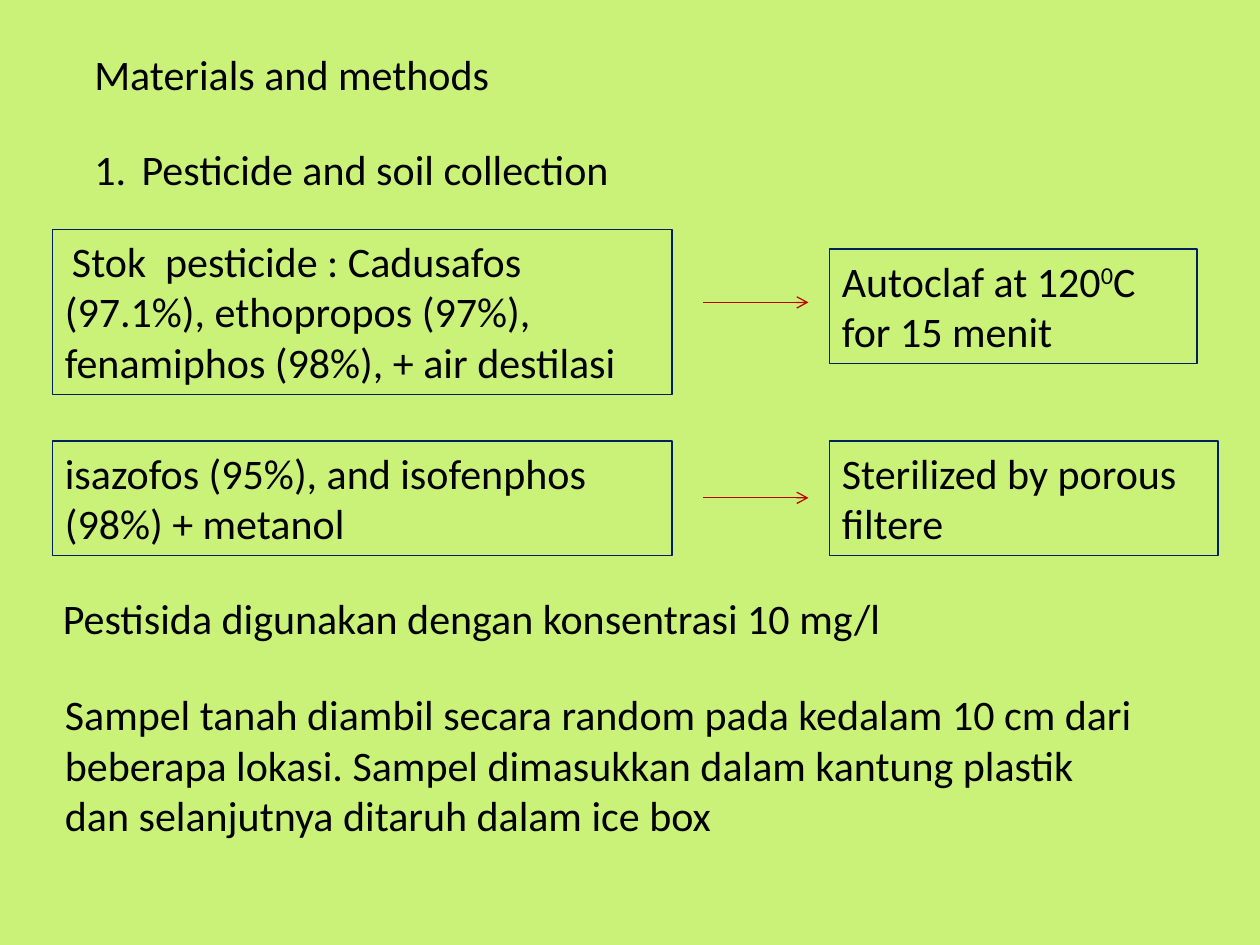
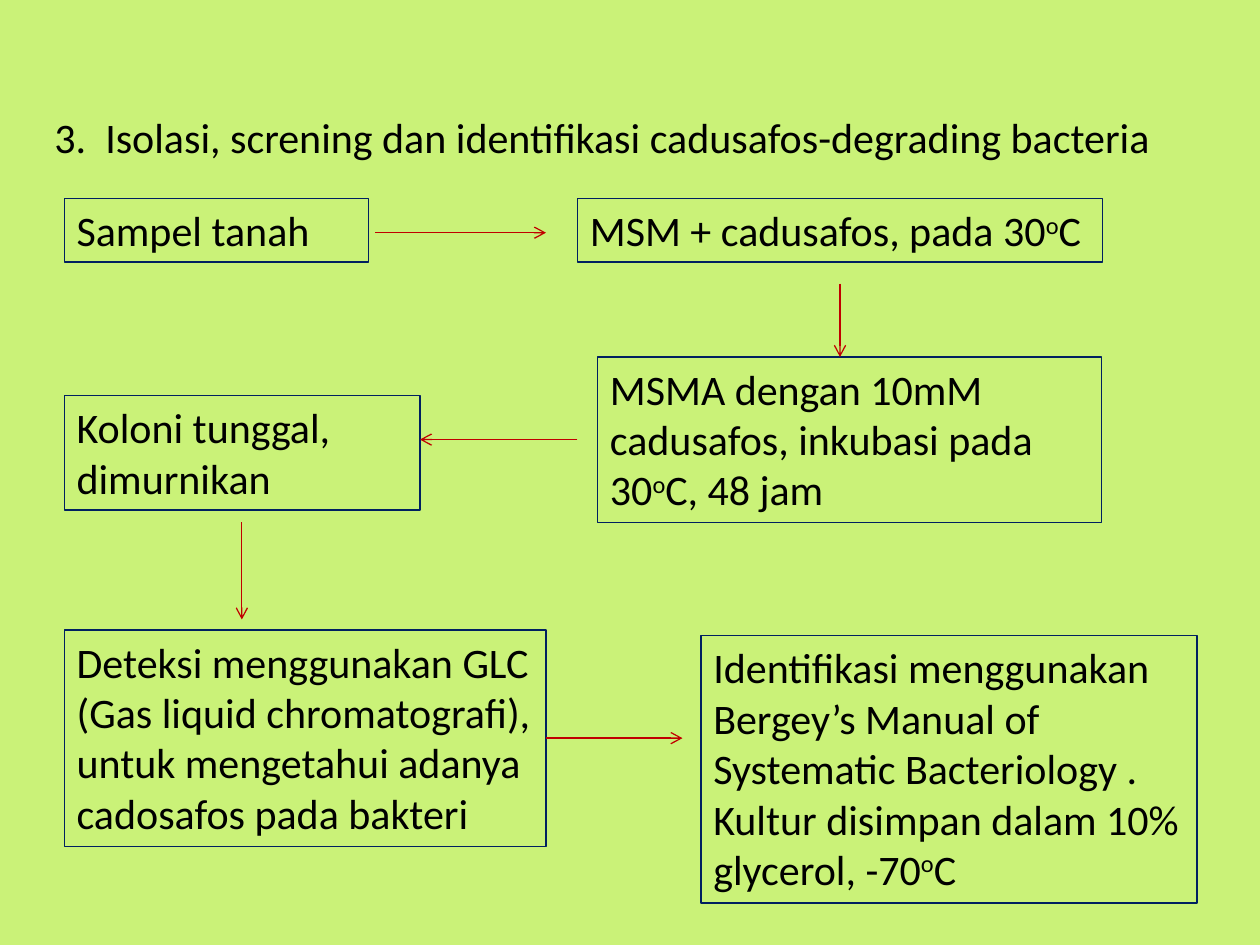
import dataclasses

import lxml.etree
import pptx
import pptx.dml.color
import pptx.enum.shapes
import pptx.enum.text
import pptx.oxml.ns
import pptx.presentation
import pptx.shapes.autoshape
import pptx.shapes.connector
import pptx.slide
import pptx.util

# Shared look
Pt = pptx.util.Pt
FONT = "Calibri"
TEXT_SIZE = 24
LINE_HEIGHT = 29.1
VERTICAL_MARGINS = 7.2
LINE_WIDTH = 0.75
NUMBER_INDENT = 27
BACKGROUND = "CAF278"
INK = "000000"
FRAME = "002060"
ARROW = "C00000"


@dataclasses.dataclass(frozen=True)
class Words:
    text: str
    size: float = TEXT_SIZE
    raised: bool = False


@dataclasses.dataclass(frozen=True)
class Passage:
    """A block of text; its height follows from its number of lines."""
    left: float
    top: float
    width: float
    lines: int
    words: tuple[Words, ...]
    framed: bool = True
    numbered: bool = False


@dataclasses.dataclass(frozen=True)
class Arrow:
    start: tuple[float, float]
    end: tuple[float, float]


def colour(value: str) -> pptx.dml.color.RGBColor:
    return pptx.dml.color.RGBColor.from_string(value)


def degrees(before: str, sign: str, after: str) -> tuple[Words, ...]:
    """Text with a raised degree sign in it."""
    return Words(before), Words(sign, raised=True), Words(after)


def add_xml(parent: lxml.etree._Element, tag: str, **attributes: str) -> None:
    lxml.etree.SubElement(parent, pptx.oxml.ns.qn(tag), attributes)


def draw_passage(slide: pptx.slide.Slide, passage: Passage) -> pptx.shapes.autoshape.Shape:
    height = VERTICAL_MARGINS + passage.lines * LINE_HEIGHT
    bounds = Pt(passage.left), Pt(passage.top), Pt(passage.width), Pt(height)
    if passage.framed:
        block = slide.shapes.add_shape(pptx.enum.shapes.MSO_SHAPE.RECTANGLE, *bounds)
        block.shadow.inherit = False
        block.fill.background()
        block.line.color.rgb = colour(FRAME)
        block.line.width = Pt(LINE_WIDTH)
    else:
        block = slide.shapes.add_textbox(*bounds)

    frame = block.text_frame
    frame.word_wrap = True
    frame.auto_size = pptx.enum.text.MSO_AUTO_SIZE.SHAPE_TO_FIT_TEXT
    frame.vertical_anchor = pptx.enum.text.MSO_ANCHOR.TOP
    paragraph = frame.paragraphs[0]
    paragraph.alignment = pptx.enum.text.PP_ALIGN.LEFT
    if passage.numbered:
        properties = paragraph._p.get_or_add_pPr()
        properties.set("marL", str(Pt(NUMBER_INDENT)))
        properties.set("indent", str(-Pt(NUMBER_INDENT)))
        add_xml(properties, "a:buAutoNum", type="arabicPeriod")

    for words in passage.words:
        run = paragraph.add_run()
        run.text = words.text
        run.font.name = FONT
        run.font.size = Pt(words.size)
        run.font.color.rgb = colour(INK)
        if words.raised:
            run._r.get_or_add_rPr().set("baseline", "30000")
    return block


def draw_arrow(slide: pptx.slide.Slide, arrow: Arrow) -> pptx.shapes.connector.Connector:
    connector = slide.shapes.add_connector(
        pptx.enum.shapes.MSO_CONNECTOR.STRAIGHT,
        *(Pt(length) for length in arrow.start + arrow.end))
    connector.line.color.rgb = colour(ARROW)
    connector.line.width = Pt(LINE_WIDTH)
    add_xml(connector.line._get_or_add_ln(), "a:tailEnd", type="arrow")
    add_xml(connector._element.spPr, "a:effectLst")
    return connector


def add_slide(deck: pptx.presentation.Presentation, passages: tuple[Passage, ...],
              arrows: tuple[Arrow, ...]) -> pptx.slide.Slide:
    slide = deck.slides.add_slide(deck.slide_layouts[6])
    for passage in passages:
        draw_passage(slide, passage)
    for arrow in arrows:
        draw_arrow(slide, arrow)
    return slide


# Slide 1: pesticide and soil collection
STOCK_LEFT, STOCK_WIDTH = 30, 354
TREATMENT_LEFT = 474
SOLVENT_TOP = 252

COLLECTION = (
    Passage(46.8, 24, 624, 1, (Words("Materials and methods"),), framed=False),
    Passage(46.8, 78.5, 594, 1, (Words("Pesticide and soil collection"),),
            framed=False, numbered=True),
    Passage(STOCK_LEFT, 131, STOCK_WIDTH, 3, (
        Words(" ", size=18),
        Words("Stok  pesticide : Cadusafos (97.1%), ethopropos (97%), "
              "fenamiphos (98%), + air destilasi"))),
    Passage(STOCK_LEFT, SOLVENT_TOP, STOCK_WIDTH, 2,
            (Words("isazofos (95%), and isofenphos (98%) + metanol"),)),
    Passage(TREATMENT_LEFT, 142.3, 210, 2,
            degrees("Autoclaf at 120", "0", "C for 15 menit")),
    Passage(TREATMENT_LEFT, SOLVENT_TOP, 222, 2,
            (Words("Sterilized by porous filtere"),)),
    Passage(28.8, 335, 528, 1,
            (Words("Pestisida digunakan dengan konsentrasi 10 mg/l"),), framed=False),
    Passage(STOCK_LEFT, 390, 624, 3, (
        Words("Sampel tanah diambil secara random pada kedalam 10 cm dari beberapa "
              "lokasi. Sampel dimasukkan dalam kantung plastik dan selanjutnya "
              "ditaruh dalam ice box"),), framed=False),
)
COLLECTION_ARROWS = tuple(Arrow((402, y), (462, y)) for y in (172.8, 284.5))

# Slide 2: isolation, screening and identification
SAMPLE_LEFT = 36.7
SAMPLE_TOP = 113.5

ISOLATION = (
    Passage(24, 60, 660, 1, (
        Words("3.  Isolasi, screning dan identifikasi cadusafos-degrading bacteria"),),
        framed=False),
    Passage(SAMPLE_LEFT, SAMPLE_TOP, 174, 1, (Words("Sampel tanah"),)),
    Passage(330, SAMPLE_TOP, 300, 1, degrees("MSM + cadusafos, pada 30", "o", "C")),
    Passage(341.5, 204, 288, 3,
            degrees("MSMA dengan 10mM cadusafos, inkubasi pada 30", "o", "C, 48 jam")),
    Passage(SAMPLE_LEFT, 226, 203.3, 2, (Words("Koloni tunggal, dimurnikan"),)),
    Passage(400.5, 363.3, 283.5, 5,
            degrees("Identifikasi menggunakan Bergey’s Manual of Systematic "
                    "Bacteriology .  Kultur disimpan dalam 10% glycerol, -70", "o", "C")),
)
DETECTION = Passage(SAMPLE_LEFT, 360, 275.3, 4, (
    Words("Deteksi menggunakan GLC (Gas liquid chromatografi), "
          "untuk mengetahui adanya cadosafos pada bakteri"),))
ISOLATION_ARROWS = (
    Arrow((214.5, 133), (312, 133)),
    Arrow((480, 162), (480, 204)),
    Arrow((330, 251.2), (240, 251.2)),
    Arrow((138.2, 298.5), (138.2, 354)),
)
DETECTION_ARROW = Arrow((312, 421.8), (390, 421.8))


def main() -> None:
    deck = pptx.Presentation()
    deck.slide_width, deck.slide_height = Pt(720), Pt(540)
    backdrop = deck.slide_master.background.fill
    backdrop.solid()
    backdrop.fore_color.rgb = colour(BACKGROUND)

    add_slide(deck, COLLECTION, COLLECTION_ARROWS)

    isolation = add_slide(deck, ISOLATION, ISOLATION_ARROWS)
    detection = draw_passage(isolation, DETECTION)
    draw_arrow(isolation, DETECTION_ARROW).begin_connect(detection, 3)

    deck.save("out.pptx")


if __name__ == "__main__":
    main()
